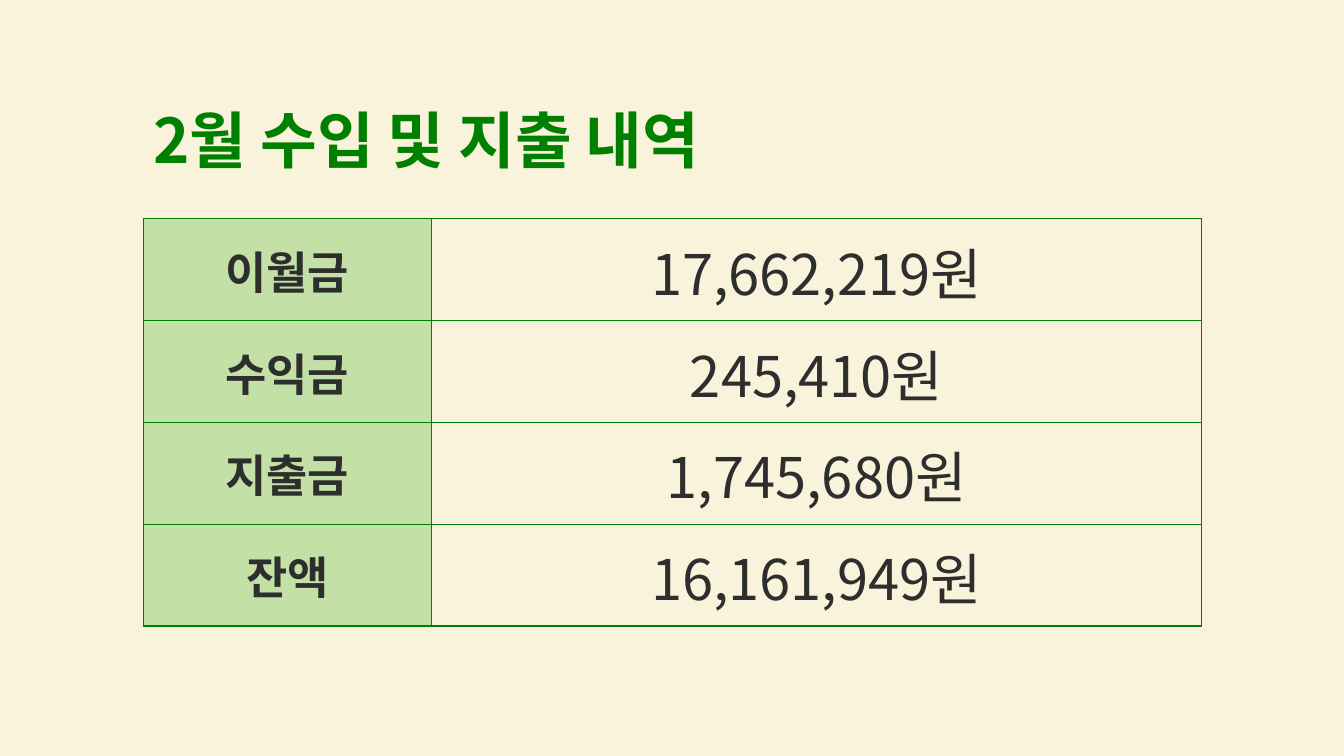
from dataclasses import dataclass

from lxml import etree
from pptx import Presentation
from pptx import util as u
from pptx.dml.color import RGBColor
from pptx.enum import text
from pptx.oxml.ns import qn


@dataclass(frozen=True)
class Theme:
    font: str = "Noto Sans CJK KR"
    background: str = "FAF3DB"
    accent: str = "008000"
    ink: str = "2D2E2D"
    label_fill: str = "C3E0A6"
    title_size: int = 44
    label_size: int = 32
    amount_size: int = 40
    border_width: int = 1


THEME = Theme()
SLIDE_WIDTH, SLIDE_HEIGHT = u.Inches(13.33), u.Inches(7.5)
LEFT, WIDTH = u.Inches(1.42), u.Inches(10.5)
TITLE_TOP, TITLE_HEIGHT = u.Inches(0.55), u.Inches(1.25)
TABLE_TOP, ROW_HEIGHT = u.Inches(2.17), u.Inches(1.01)
LABEL_WIDTH = u.Inches(2.86)

TITLE = "2월 수입 및 지출 내역"
BALANCE = [
    ("이월금", "17,662,219원"),
    ("수익금", "245,410원"),
    ("지출금", "1,745,680원"),
    ("잔액", "16,161,949원"),
]


def format_paragraph(paragraph, size, color, bold, alignment, line_spacing=1.0):
    paragraph.alignment = alignment
    paragraph.line_spacing = line_spacing
    for run in paragraph.runs:
        run.font.size = u.Pt(size)
        run.font.bold = bold
        run.font.color.rgb = RGBColor.from_string(color)
        run.font.name = THEME.font
        east_asian = etree.SubElement(run.font._element, qn("a:ea"))
        east_asian.set("typeface", THEME.font)


def add_title(slide):
    title = slide.shapes.title
    title.left, title.top = LEFT, TITLE_TOP
    title.width, title.height = WIDTH, TITLE_HEIGHT
    frame = title.text_frame
    frame.text = TITLE
    frame.word_wrap = True
    frame.auto_size = text.MSO_AUTO_SIZE.NONE
    frame.vertical_anchor = text.MSO_ANCHOR.BOTTOM
    format_paragraph(frame.paragraphs[0], THEME.title_size, THEME.accent,
                     True, text.PP_ALIGN.LEFT, 0.9)


def set_borders(cell):
    properties = cell._tc.get_or_add_tcPr()
    for position, side in enumerate(("lnL", "lnR", "lnT", "lnB")):
        line = etree.Element(qn(f"a:{side}"), w=str(u.Pt(THEME.border_width)))
        fill = etree.SubElement(line, qn("a:solidFill"))
        etree.SubElement(fill, qn("a:srgbClr"), val=THEME.accent)
        properties.insert(position, line)


def fill_cell(cell, content, size, bold, fill=None, line_spacing=1.0):
    cell.text = content
    cell.vertical_anchor = text.MSO_ANCHOR.MIDDLE
    format_paragraph(cell.text_frame.paragraphs[0], size, THEME.ink,
                     bold, text.PP_ALIGN.CENTER, line_spacing)
    if fill:
        cell.fill.solid()
        cell.fill.fore_color.rgb = RGBColor.from_string(fill)
    else:
        cell.fill.background()
    set_borders(cell)


def add_balance_table(slide):
    table = slide.shapes.add_table(len(BALANCE), 2, LEFT, TABLE_TOP, WIDTH,
                                   ROW_HEIGHT * len(BALANCE)).table
    table.first_row = table.horz_banding = False
    table.columns[0].width = LABEL_WIDTH
    table.columns[1].width = WIDTH - LABEL_WIDTH
    for row, (label, amount) in enumerate(BALANCE):
        table.rows[row].height = ROW_HEIGHT
        fill_cell(table.cell(row, 0), label, THEME.label_size, True,
                  THEME.label_fill)
        fill_cell(table.cell(row, 1), amount, THEME.amount_size, False,
                  line_spacing=1.03)


def main():
    presentation = Presentation()
    presentation.slide_width = SLIDE_WIDTH
    presentation.slide_height = SLIDE_HEIGHT
    slide = presentation.slides.add_slide(presentation.slide_layouts[5])
    slide.background.fill.solid()
    slide.background.fill.fore_color.rgb = RGBColor.from_string(THEME.background)
    add_title(slide)
    add_balance_table(slide)
    presentation.save("out.pptx")


if __name__ == "__main__":
    main()
